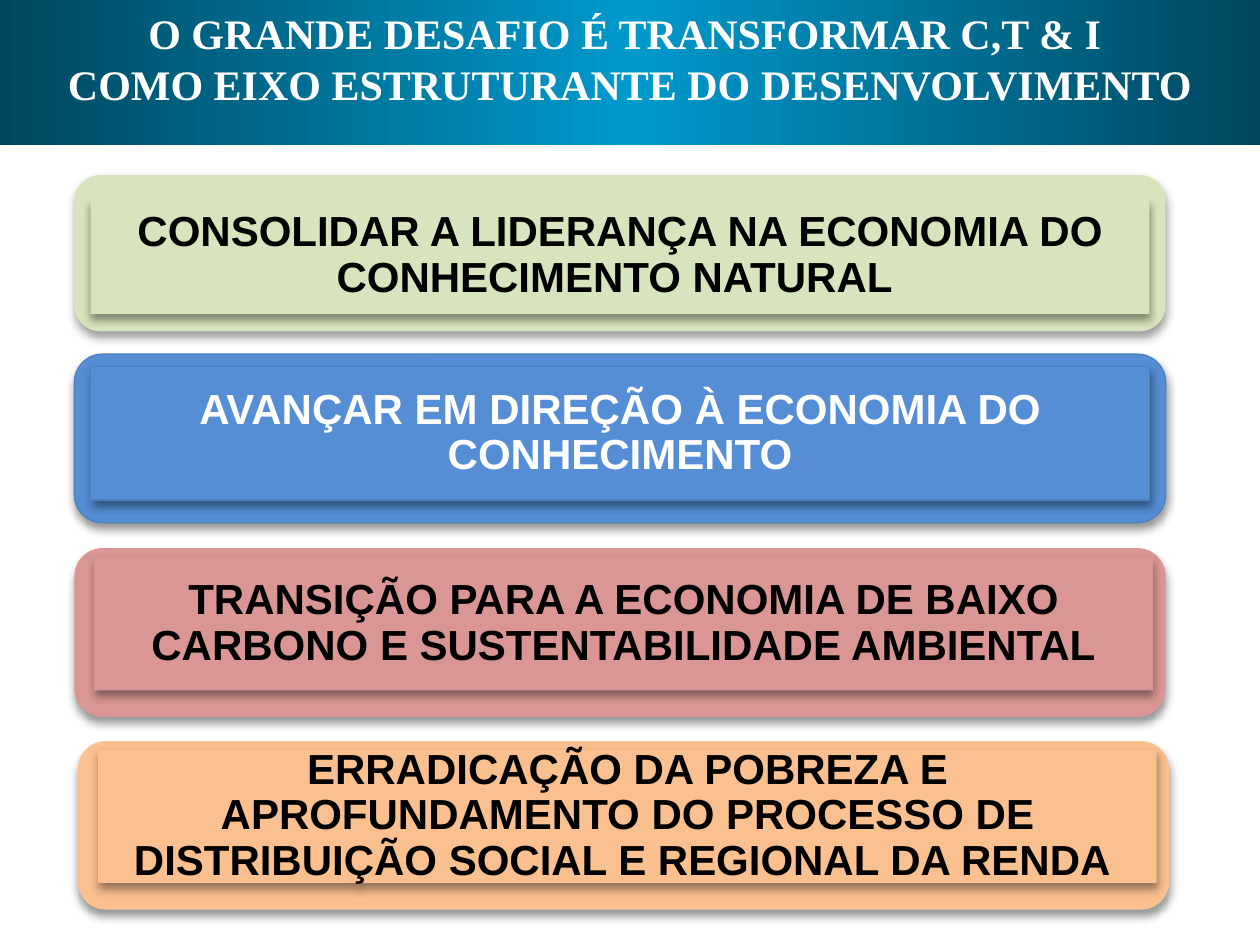
from pptx import Presentation
from pptx import util as u
from pptx.dml.color import RGBColor
from pptx.enum import shapes, text
from pptx.oxml import parse_xml
from pptx.oxml.ns import nsdecls
from copy import deepcopy

Cm = u.Cm
HUES = {"green": "D7E4BD", "blue": "558ED5", "red": "D99694", "orange": "FAC090",
        "edge": "4F81BD", "black": "000000", "white": "FFFFFF",
        "dark": "00475E", "light": "0099CC"}
WIDE, INNER = 22, 21.34  # widths of card and label

# fill, ink, edge, card (left, top, height), label (left, top, height), words
CARDS = [
    ("green", "black", None, (1.5, 3.53, 3.15), (1.83, 3.99, 2.34),
     "CONSOLIDAR A LIDERANÇA NA ECONOMIA DO CONHECIMENTO NATURAL "),
    ("blue", "white", "edge", (1.5, 7.14, 3.4), (1.83, 7.39, 2.69),
     "AVANÇAR EM DIREÇÃO À ECONOMIA DO CONHECIMENTO"),
    ("red", "black", None, (1.5, 11.05, 3.4), (1.9, 11.23, 2.69),
     "TRANSIÇÃO PARA A ECONOMIA DE BAIXO CARBONO E SUSTENTABILIDADE AMBIENTAL"),
    ("orange", "black", None, (1.57, 14.94, 3.4), (1.98, 15.11, 2.69),
     "ERRADICAÇÃO DA POBREZA E APROFUNDAMENTO DO PROCESSO DE "
     "DISTRIBUIÇÃO SOCIAL E REGIONAL DA RENDA "),
]
TITLE = ["O GRANDE DESAFIO É TRANSFORMAR C,T & I ",
         "COMO EIXO ESTRUTURANTE DO DESENVOLVIMENTO"]


def hue(name):
    return RGBColor.from_string(HUES[name])


def add_run(para, words, face, ink):
    para.alignment = text.PP_ALIGN.CENTER
    run = para.add_run()
    run.text = words
    font = run.font
    font.name, font.size, font.bold = face, u.Pt(24), True
    font.color.rgb = hue(ink)


def add_shade(shape):
    shape.shadow.inherit = False
    shape._element.spPr.find("{*}effectLst").append(parse_xml(
        f'<a:outerShdw {nsdecls("a")} blurRad="{u.Pt(5.2)}" dist="{u.Pt(3)}" '
        f'dir="5400000" rotWithShape="0"><a:srgbClr val="{HUES["black"]}">'
        '<a:alpha val="40000"/></a:srgbClr></a:outerShdw>'))


def add_plate(group, kind, place, width, fill, edge):
    left, top, height = place
    plate = group.shapes.add_shape(kind, Cm(left), Cm(top), Cm(width), Cm(height))
    plate.fill.solid()
    plate.fill.fore_color.rgb = hue(fill)
    if edge:
        plate.line.color.rgb = hue(edge)
        plate.line.width = u.Pt(0.75)
    else:
        plate.line.fill.background()
    add_shade(plate)
    return plate


def add_card(slide, fill, ink, edge, outer, inner, words):
    group = slide.shapes.add_group_shape()
    kinds = shapes.MSO_SHAPE
    add_plate(group, kinds.ROUNDED_RECTANGLE, outer, WIDE, fill, edge)
    label = add_plate(group, kinds.RECTANGLE, inner, INNER, fill, edge)
    frame = label.text_frame
    frame.word_wrap = True
    frame.vertical_anchor = text.MSO_ANCHOR.MIDDLE
    frame.margin_left = frame.margin_right = Cm(0.15)
    frame.margin_top = frame.margin_bottom = Cm(0.15)
    para = frame.paragraphs[0]
    para.line_spacing = 0.9
    add_run(para, words, "Arial", ink)


def set_title(slide):
    title = slide.shapes.title
    title.left, title.top, title.width, title.height = 0, 0, Cm(25.4), Cm(2.92)
    # Three-stop band, dark at both ends
    title.fill.gradient()
    title.fill.gradient_angle = 0
    stops = title.fill._fill._gradFill.gsLst
    stops.insert(1, deepcopy(stops[0]))
    for stop, (spot, name) in zip(title.fill.gradient_stops,
                                  [(0, "dark"), (0.5, "light"), (1, "dark")]):
        stop.position = spot
        stop.color.rgb = hue(name)
    # Two lines, set a little above the middle
    frame = title.text_frame
    frame.auto_size = text.MSO_AUTO_SIZE.NONE
    frame.word_wrap = True
    frame.vertical_anchor = text.MSO_ANCHOR.MIDDLE
    frame.margin_top, frame.margin_bottom = Cm(0.13), Cm(0.7)
    for i, words in enumerate(TITLE):
        para = frame.add_paragraph() if i else frame.paragraphs[0]
        add_run(para, words, "Times New Roman", "white")


def main():
    deck = Presentation()
    deck.slide_width, deck.slide_height = Cm(25.4), Cm(19.05)
    slide = deck.slides.add_slide(deck.slide_layouts[5])
    set_title(slide)
    for card in CARDS:
        add_card(slide, *card)
    deck.save("out.pptx")


if __name__ == "__main__":
    main()
